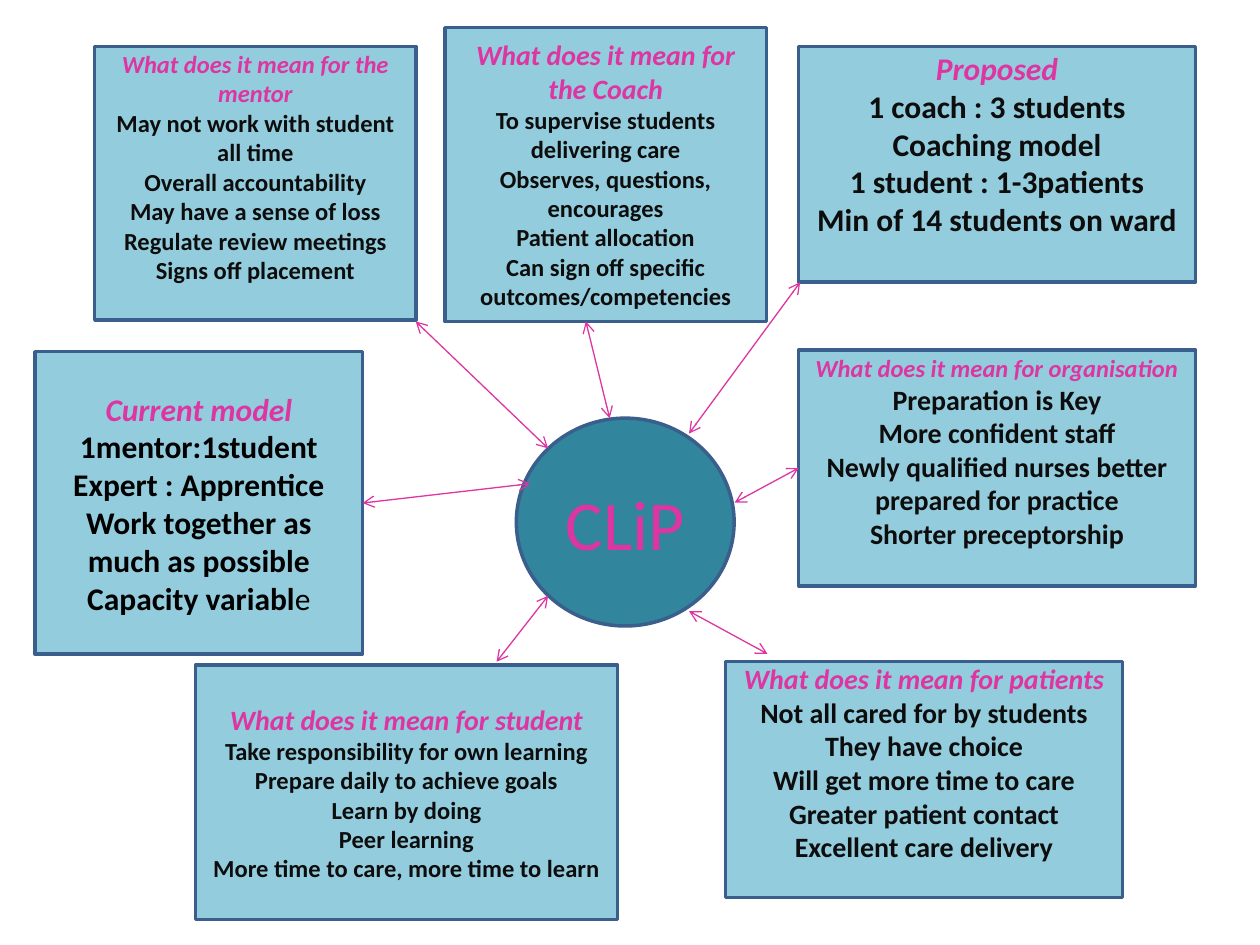
from dataclasses import dataclass

from lxml.etree import SubElement
from pptx import Presentation
from pptx.dml.color import RGBColor
from pptx.enum.shapes import MSO_CONNECTOR, MSO_SHAPE
from pptx.enum.text import MSO_ANCHOR, PP_ALIGN
from pptx.oxml.ns import qn
from pptx.util import Cm, Pt


@dataclass(frozen=True)
class Theme:
    font: str = "Calibri"
    accent: str = "DD35A1"
    body: str = "0D0D0D"
    black: str = "000000"
    box: str = "93CDDD"
    hub: str = "31859C"
    outline: str = "3A5F8C"
    small: int = 14
    medium: int = 16
    large: int = 18
    hub_size: int = 40
    outline_width: float = 2
    arrow_width: float = 0.75


THEME = Theme()


def add_text(p, text, *, size, color, bold=False, italic=False):
    r = p.add_run()
    r.text = text
    f = r.font
    f.name, f.size = THEME.font, Pt(size)
    f.bold, f.italic = bold, italic
    f.color.rgb = RGBColor.from_string(color)


class Diagram:
    def __init__(self, slide, theme):
        self.s = slide
        self.theme = theme

    def shape(self, kind, frame, fill):
        sp = self.s.shapes.add_shape(kind, *map(Cm, frame))
        sp.shadow.inherit = False
        sp.fill.solid()
        sp.fill.fore_color.rgb = RGBColor.from_string(fill)
        sp.line.color.rgb = RGBColor.from_string(self.theme.outline)
        sp.line.width = Pt(self.theme.outline_width)
        tf = sp.text_frame
        tf.word_wrap = True
        tf.vertical_anchor = MSO_ANCHOR.MIDDLE
        tf.paragraphs[0].alignment = PP_ALIGN.CENTER
        return sp

    def hub(self, frame, text):
        t = self.theme
        sp = self.shape(MSO_SHAPE.OVAL, frame, t.hub)
        add_text(sp.text_frame.paragraphs[0], text, size=t.hub_size, color=t.accent)

    def box(self, frame, title, lines, sizes, top=None, color=None):
        """Titled box; top is the inset above the text, None centres the text."""
        t = self.theme
        sp = self.shape(MSO_SHAPE.RECTANGLE, frame, t.box)
        tf = sp.text_frame
        if top is not None:
            tf.vertical_anchor = MSO_ANCHOR.TOP
            tf.margin_top = Cm(top)
        title_size, body_size = sizes
        add_text(tf.paragraphs[0], title, size=title_size, color=t.accent,
                 bold=True, italic=True)
        for line in lines:
            p = tf.add_paragraph()
            p.alignment = PP_ALIGN.CENTER
            add_text(p, line, size=body_size, color=color or t.body, bold=True)
        return sp

    def arrow(self, start, end, box=None, side=None):
        """Double-headed arrow, its end joined to the box side if one is given."""
        c = self.s.shapes.add_connector(MSO_CONNECTOR.STRAIGHT, *map(Cm, start + end))
        if box is not None:
            c.end_connect(box, side)
        c.line.color.rgb = RGBColor.from_string(self.theme.accent)
        c.line.width = Pt(self.theme.arrow_width)
        ln = c.line._get_or_add_ln()
        for tag in ("a:headEnd", "a:tailEnd"):
            SubElement(ln, qn(tag)).set("type", "arrow")
        SubElement(c._element.spPr, qn("a:effectLst"))


def main():
    prs = Presentation()
    prs.slide_width, prs.slide_height = Cm(25.4), Cm(19.05)
    t = THEME
    d = Diagram(prs.slides.add_slide(prs.slide_layouts[6]), t)

    d.hub((10.41, 8.43, 4.39, 4.19), "CLiP")
    d.box((1.91, 0.94, 6.48, 5.51), "What does it mean for the mentor",
          ["May not work with student all time", "Overall accountability",
           "May have a sense of loss", "Regulate review meetings",
           "Signs off placement"],
          (t.small, t.small), top=0.05)
    d.box((3.94, 13.41, 8.51, 5.13), "What does it mean for student",
          ["Take responsibility for own learning", "Prepare daily to achieve goals",
           "Learn by doing", "Peer learning", "More time to care, more time to learn"],
          (t.medium, t.small))
    current = d.box((0.71, 7.09, 6.6, 6.1), "Current model",
                    ["1mentor:1student", "Expert : Apprentice",
                     "Work together as much as possible", "Capacity variabl"],
                    (t.large, t.large), color=t.black)
    add_text(current.text_frame.paragraphs[-1], "e", size=t.large, color=t.black)
    organisation = d.box((16.1, 7.06, 8, 4.75), "What does it mean for organisation",
                         ["Preparation is Key", "More confident staff",
                          "Newly qualified nurses better prepared for practice",
                          "Shorter preceptorship"],
                         (t.small, t.medium), top=0.05)
    d.box((14.63, 13.34, 8, 4.75), "What does it mean for patients",
          ["Not all cared for by students", "They have choice",
           "Will get more time to care", "Greater patient contact",
           "Excellent care delivery"],
          (t.medium, t.medium), top=0)
    d.box((16.1, 0.94, 8, 4.75), "Proposed",
          ["1 coach : 3 students", "Coaching model", "1 student : 1-3patients",
           "Min of 14 students on ward"],
          (t.large, t.large), top=0.05)
    d.box((8.97, 0.56, 6.48, 5.92), "What does it mean for the Coach",
          ["To supervise students delivering care", "Observes, questions, encourages",
           "Patient allocation", "Can sign off specific outcomes/competencies"],
          (t.medium, t.small), top=0.2)

    d.arrow((10.69, 9.75), (7.31, 10.14), current, 3)
    d.arrow((14.81, 10.13), (16.1, 9.43), organisation, 1)
    for start, end in [
        ((12.29, 8.43), (11.81, 6.48)),
        ((13.89, 8.74), (16.13, 5.69)),
        ((13.89, 12.32), (15.47, 13.18)),
        ((11.05, 12.01), (10.01, 13.34)),
        ((11.05, 9.04), (8.38, 6.48)),
    ]:
        d.arrow(start, end)

    prs.save("out.pptx")


if __name__ == "__main__":
    main()
